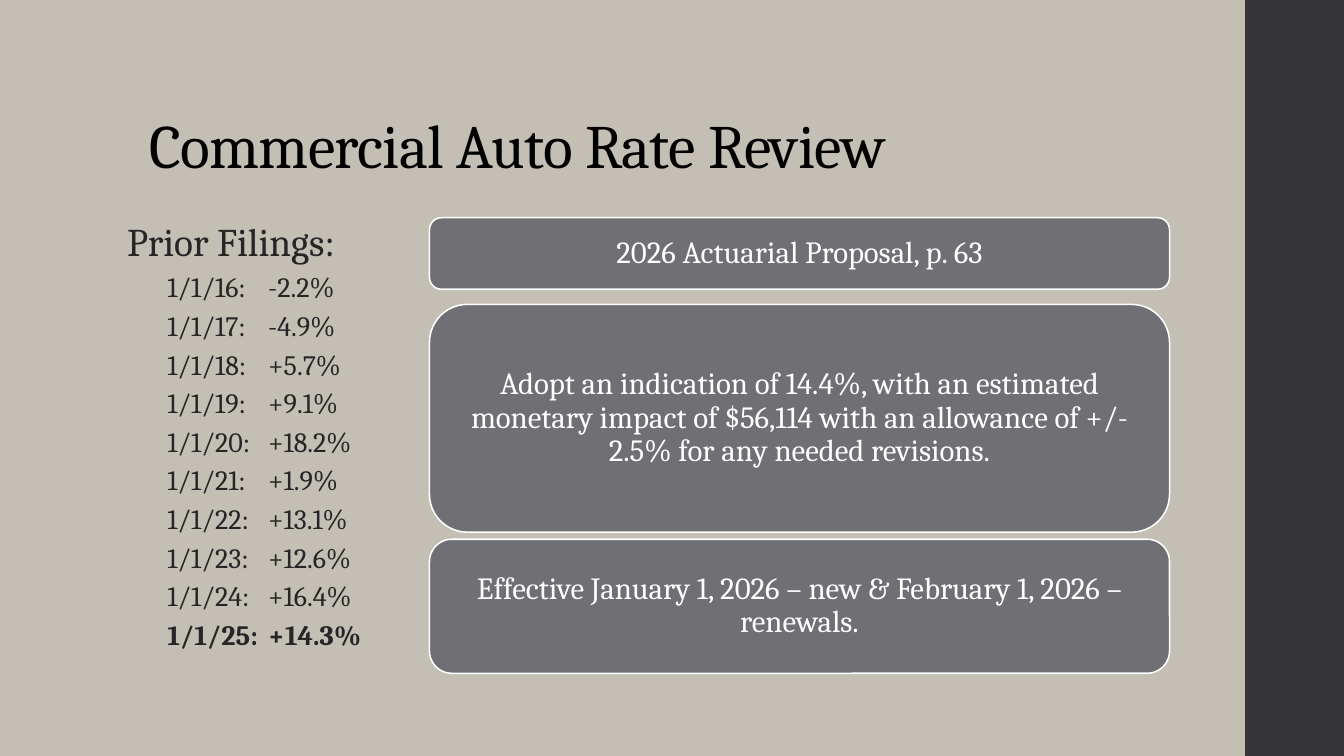
from lxml import etree
from pptx import Presentation
from pptx.dml.color import RGBColor
from pptx.enum import shapes, text
from pptx.oxml import ns
from pptx.util import Inches, Pt

SAND = RGBColor(0xC3, 0xBF, 0xB5)
CHARCOAL = RGBColor(0x35, 0x35, 0x37)
SLATE = RGBColor(0x6F, 0x6F, 0x74)
INK = RGBColor(0x26, 0x26, 0x26)
BLACK = RGBColor(0, 0, 0)
WHITE = RGBColor(0xFF, 0xFF, 0xFF)
FONT = "Cambria"

FILINGS = [
    ("1/1/16:", "-2.2%"),
    ("1/1/17:", "-4.9%"),
    ("1/1/18:", "+5.7%"),
    ("1/1/19:", "+9.1%"),
    ("1/1/20:", "+18.2%"),
    ("1/1/21:", "+1.9%"),
    ("1/1/22:", "+13.1%"),
    ("1/1/23:", "+12.6%"),
    ("1/1/24:", "+16.4%"),
    ("1/1/25:", "+14.3%"),
]
PROPOSALS = [
    (2.16, 0.71, "2026 Actuarial Proposal, p. 63"),
    (3.02, 2.26, "Adopt an indication of 14.4%, with an estimated monetary impact "
                 "of $56,114 with an allowance of +/- 2.5% for any needed revisions."),
    (5.35, 1.33, "Effective January 1, 2026 – new & February 1, 2026 – renewals."),
]


def place(item, left, top, width, height):
    item.left, item.top = Inches(left), Inches(top)
    item.width, item.height = Inches(width), Inches(height)


def add_run(paragraph, wording, size, color, bold=False):
    paragraph.line_spacing = 0.9
    run = paragraph.add_run()
    run.text = wording
    run.font.name = FONT
    run.font.size = Pt(size)
    run.font.bold = bold
    run.font.color.rgb = color
    return run


def add_block(slide, kind, bounds, color):
    block = slide.shapes.add_shape(kind, *map(Inches, bounds))
    block.shadow.inherit = False
    block.fill.solid()
    block.fill.fore_color.rgb = color
    block.line.fill.background()
    return block


def write_title(slide):
    title = slide.shapes.title
    place(title, 1.38, 0.4, 10.6, 1.45)
    frame = title.text_frame
    frame.auto_size = text.MSO_AUTO_SIZE.NONE
    frame.vertical_anchor = text.MSO_ANCHOR.BOTTOM
    heading = frame.paragraphs[0]
    heading.alignment = text.PP_ALIGN.LEFT
    run = add_run(heading, "Commercial Auto Rate Review", 44, BLACK)
    run.font._element.set("spc", "-50")


def write_list_line(paragraph, wording, size, indent, bold=False):
    paragraph.level = 1
    paragraph.space_before = paragraph.space_after = Pt(3)
    add_run(paragraph, wording, size, INK, bold)
    properties = paragraph._p.get_or_add_pPr()
    properties.set("marL", str(Inches(indent)))
    properties.set("indent", "0")
    etree.SubElement(properties, ns.qn("a:buNone"))


def write_filings(slide):
    filings = slide.placeholders[1]
    place(filings, 0.66, 2.16, 3.32, 4.6)
    frame = filings.text_frame
    frame.auto_size = text.MSO_AUTO_SIZE.NONE
    write_list_line(frame.paragraphs[0], "Prior Filings:", 28, 0.5)
    for date, change in FILINGS:
        latest = date == FILINGS[-1][0]
        write_list_line(frame.add_paragraph(), f"{date}\t{change}", 20, 0.9, latest)


def add_proposal(slide, top, height, wording):
    card = add_block(slide, shapes.MSO_SHAPE.ROUNDED_RECTANGLE,
                     (4.26, top, 7.34, height), SLATE)
    card.line.color.rgb = WHITE
    card.line.width = Pt(1.1)
    frame = card.text_frame
    frame.word_wrap = True
    frame.vertical_anchor = text.MSO_ANCHOR.MIDDLE
    frame.margin_left = frame.margin_right = Inches(0.09)
    frame.margin_top = frame.margin_bottom = Inches(0.09)
    frame.paragraphs[0].alignment = text.PP_ALIGN.CENTER
    add_run(frame.paragraphs[0], wording, 22, WHITE)


def main():
    deck = Presentation()
    deck.slide_width, deck.slide_height = Inches(13.33), Inches(7.5)
    slide = deck.slides.add_slide(deck.slide_layouts[1])
    slide.background.fill.solid()
    slide.background.fill.fore_color.rgb = SAND
    add_block(slide, shapes.MSO_SHAPE.RECTANGLE, (12.35, 0, 0.98, 7.5), CHARCOAL)
    write_title(slide)
    write_filings(slide)
    for top, height, wording in PROPOSALS:
        add_proposal(slide, top, height, wording)
    deck.save("out.pptx")


if __name__ == "__main__":
    main()
